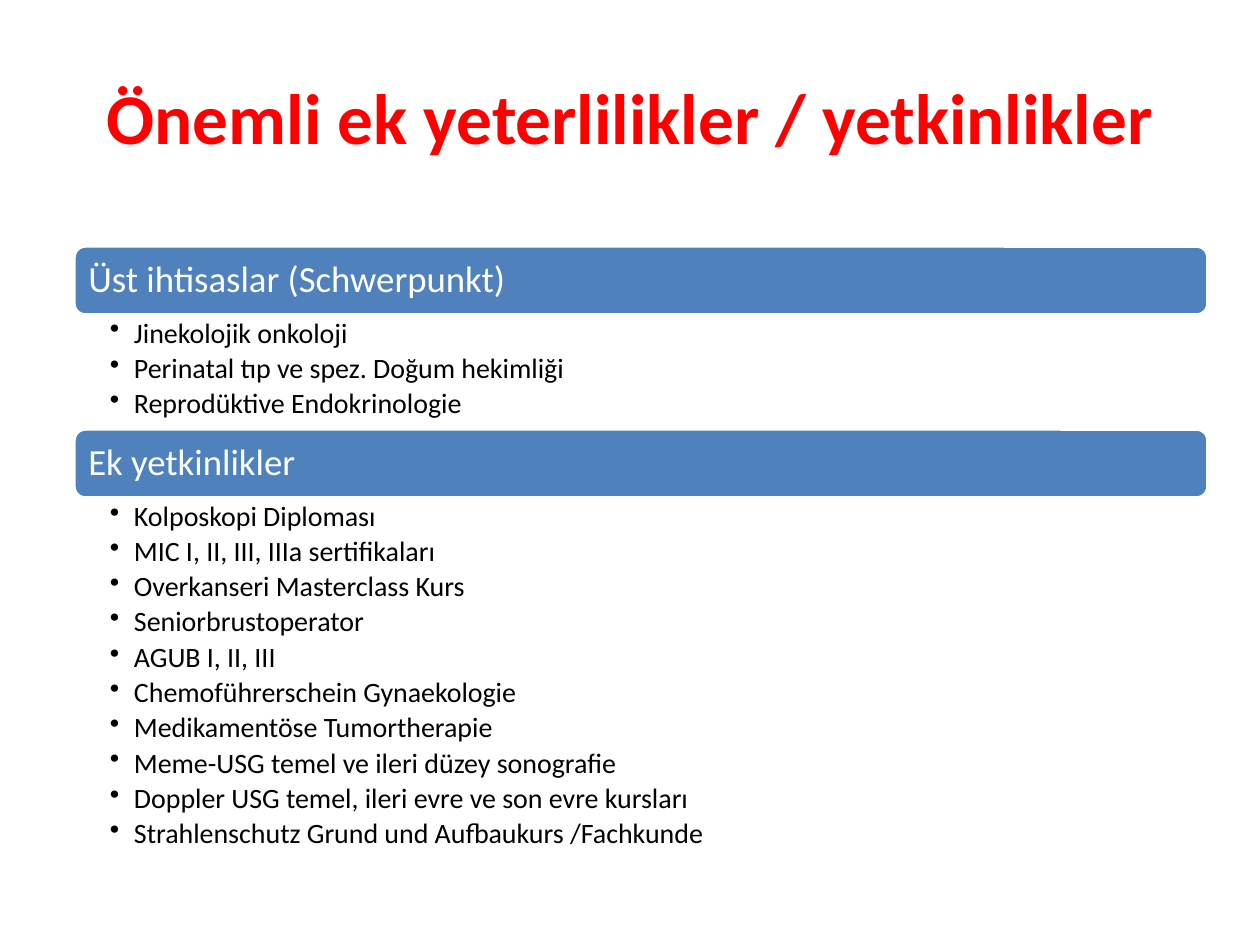
"""Build the slide on key additional qualifications."""
import pptx
import pptx.dml.color
import pptx.enum.shapes
import pptx.enum.text
import pptx.util
from lxml import etree

PX_PER_INCH = 126
LEFT, WIDTH = 74, 1134
BAR_HEIGHT = 69
INDENT = 24

SECTIONS = [
    ("Üst ihtisaslar (Schwerpunkt)", 246, 113, [
        "Jinekolojik onkoloji",
        "Perinatal tıp ve spez. Doğum hekimliği",
        "Reprodüktive Endokrinologie",
    ]),
    ("Ek yetkinlikler", 429, 420, [
        "Kolposkopi Diploması",
        "MIC I, II, III, IIIa sertifikaları",
        "Overkanseri Masterclass Kurs",
        "Seniorbrustoperator",
        "AGUB I, II, III",
        "Chemoführerschein Gynaekologie",
        "Medikamentöse Tumortherapie",
        "Meme-USG temel ve ileri düzey sonografie",
        "Doppler USG temel, ileri evre ve son evre kursları",
        "Strahlenschutz Grund und Aufbaukurs /Fachkunde",
    ]),
]


def px(length):
    return pptx.util.Emu(round(length * 914400 / PX_PER_INCH))


def color(hex_value):
    return pptx.dml.color.RGBColor.from_string(hex_value)


def set_insets(frame, left, top, right, bottom):
    frame.word_wrap = True
    frame.margin_left, frame.margin_top = px(left), px(top)
    frame.margin_right, frame.margin_bottom = px(right), px(bottom)


def style(paragraph, size, hex_value, bold=False):
    paragraph.font.name = "Calibri"
    paragraph.font.size = pptx.util.Pt(size)
    paragraph.font.bold = bold
    paragraph.font.color.rgb = color(hex_value)


def add_bullet(paragraph):
    properties = paragraph._p.get_or_add_pPr()
    properties.set("marL", str(px(INDENT)))
    properties.set("indent", str(-px(INDENT)))
    bullet = etree.SubElement(properties, pptx.oxml.ns.qn("a:buChar"))
    bullet.set("char", "•")


def add_title(slide, text):
    title = slide.shapes.add_textbox(px(63), px(37), px(WIDTH), px(158))
    frame = title.text_frame
    frame.word_wrap = True
    frame.vertical_anchor = pptx.enum.text.MSO_ANCHOR.MIDDLE
    frame.text = text
    heading = frame.paragraphs[0]
    heading.alignment = pptx.enum.text.PP_ALIGN.CENTER
    style(heading, 40.7, "FF0000", bold=True)


def add_section_bar(slide, text, top):
    bar = slide.shapes.add_shape(
        pptx.enum.shapes.MSO_SHAPE.ROUNDED_RECTANGLE,
        px(LEFT), px(top), px(WIDTH), px(BAR_HEIGHT))
    bar.shadow.inherit = False
    bar.fill.solid()
    bar.fill.fore_color.rgb = color("4F81BD")
    bar.line.color.rgb = color("FFFFFF")
    bar.line.width = pptx.util.Pt(2)
    frame = bar.text_frame
    set_insets(frame, 11, 8, 11, 8)
    frame.vertical_anchor = pptx.enum.text.MSO_ANCHOR.MIDDLE
    frame.text = text
    heading = frame.paragraphs[0]
    heading.alignment = pptx.enum.text.PP_ALIGN.LEFT
    heading.line_spacing = 0.9
    style(heading, 21, "FFFFFF")


def add_qualifications(slide, entries, top, height):
    box = slide.shapes.add_textbox(px(LEFT), px(top), px(WIDTH), px(height))
    frame = box.text_frame
    set_insets(frame, 36, 4, 20, 4)
    frame.text = "\n".join(entries)
    for entry in frame.paragraphs:
        entry.level = 1
        add_bullet(entry)
        entry.line_spacing = 0.9
        entry.space_after = pptx.util.Pt(2.9)
        style(entry, 16, "000000")


def main():
    deck = pptx.Presentation()
    deck.slide_width, deck.slide_height = px(1260), px(945)
    slide = deck.slides.add_slide(deck.slide_layouts[6])
    for heading, top, list_height, entries in SECTIONS:
        add_section_bar(slide, heading, top)
        add_qualifications(slide, entries, top + BAR_HEIGHT, list_height)
    add_title(slide, "Önemli ek yeterlilikler / yetkinlikler")
    deck.save("out.pptx")


if __name__ == "__main__":
    main()
